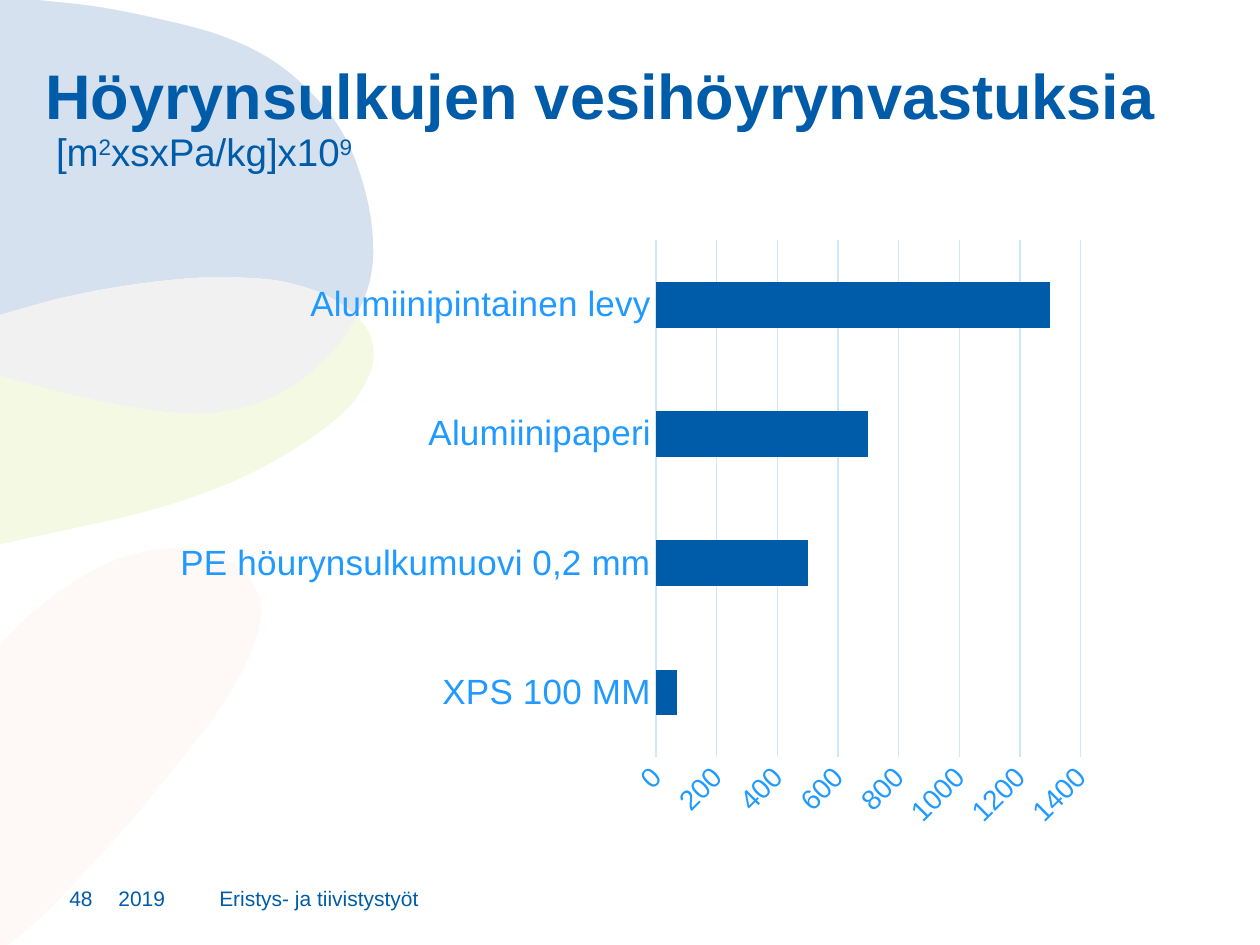
from copy import deepcopy
from typing import NamedTuple

from pptx import Presentation
from pptx.chart.data import CategoryChartData
from pptx.dml.color import RGBColor
from pptx.enum.chart import XL_CHART_TYPE as ChartType, XL_TICK_MARK as Tick
from pptx.enum.text import MSO_ANCHOR as Anchor, MSO_AUTO_SIZE as AutoSize, PP_ALIGN as Align
from pptx.oxml.ns import qn
from pptx.util import Pt

FONT = "Arial"
COLORS = {"navy": "005CA8", "label": "219AFF", "grid": "CCE8FF",
          "pink": "FEF9F7", "green": "F3F9E3", "blue": "D6E1F0", "grey": "F1F1F1"}
Curve = list[tuple[float, float]]


class Blob(NamedTuple):
    color: str
    outline: Curve


class Footer(NamedTuple):
    text: str
    left: float
    width: float


class TitleRun(NamedTuple):
    text: str
    size: float = 22
    bold: bool = False
    superscript: bool = False


def rgb(name: str) -> RGBColor:
    return RGBColor.from_string(COLORS[name])


def style(font, size: float, color: str = "navy", bold: bool = False) -> None:
    font.name, font.size, font.bold = FONT, Pt(size), bold
    font.color.rgb = rgb(color)


def smooth(knots: Curve, steps: int = 6) -> Curve:
    """Catmull-Rom curve through the knots."""
    ends = [knots[0], *knots, knots[-1]]
    curve = [knots[0]]
    for a, b, c, d in zip(ends, ends[1:], ends[2:], ends[3:]):
        for i in range(1, steps + 1):
            t = i / steps
            curve.append(tuple(
                0.5 * (2 * q + (r - p) * t + (2 * p - 5 * q + 4 * r - u) * t ** 2
                       + (3 * q - p - 3 * r + u) * t ** 3)
                for p, q, r, u in zip(a, b, c, d)))
    return curve


def draw_blob(shapes, blob: Blob) -> None:
    points = [(Pt(x), Pt(y)) for x, y in blob.outline]
    builder = shapes.build_freeform(*points[0])
    builder.add_line_segments(points[1:], close=True)
    sp = builder.convert_to_shape()
    sp.shadow.inherit = False
    sp.fill.solid()
    sp.fill.fore_color.rgb = rgb(blob.color)
    sp.line.fill.background()


def clear_margins(tf) -> None:
    tf.margin_left = tf.margin_right = tf.margin_top = tf.margin_bottom = 0
    tf.word_wrap = True


def draw_footer(shapes, footer: Footer) -> None:
    tf = shapes.add_textbox(Pt(footer.left), Pt(509), Pt(footer.width), Pt(11.5)).text_frame
    clear_margins(tf)
    tf.vertical_anchor = Anchor.BOTTOM
    tf.text = footer.text
    style(tf.paragraphs[0].runs[0].font, 12)


def add_title_run(p, part: TitleRun):
    r = p.add_run()
    r.text = part.text
    style(r.font, part.size, bold=part.bold)
    if part.superscript:
        r.font._element.set("baseline", "30000")
    return r


# Curves that bound the background blobs; all meet at the tip
TIP = (203.6, 180.6)
BLUE_EDGE = smooth([
    (21.6, 0), (54, 3.6), (87.8, 10.1), (126, 20.2), (157, 35.3), (182.2, 57.6),
    (198.7, 81.4), (209.5, 112.3), (213.3, 140.4), (211, 162), TIP])
WAVE_TOP = smooth([
    (0, 180), (33.8, 170.6), (67.7, 163.9), (101.5, 159.6), (128.2, 158.4),
    (157, 160.1), (179.3, 165.8), (193.7, 172.8), TIP])
WAVE_BOTTOM = smooth([
    TIP, (194.4, 195.8), (180.7, 210.2), (164.2, 222.5), (145.4, 231.1), (125.3, 235.4),
    (108, 236.4), (83.5, 234), (52.6, 228.2), (23.8, 221.2), (0, 214.7)])
GREEN_EDGE = smooth([
    TIP, (211, 190.4), (213.6, 203), (210.2, 216), (199.4, 232.6), (176.4, 251.3),
    (145.4, 269.4), (111.6, 283.7), (74.9, 294.5), (42.5, 301.8), (0, 311)])
PINK_EDGE = smooth([
    (0, 368.6), (19.4, 349.2), (45.4, 330.5), (70.6, 318.2), (100, 313.2), (121.7, 316.8),
    (139, 326), (147.6, 339.8), (149, 352.8), (142.6, 375), (126, 404.6), (100, 438.5),
    (72, 472.3), (41.8, 505.4), (19.4, 527.8), (4.3, 540)])
BLOBS = [
    Blob("pink", PINK_EDGE + [(0, 540)]),
    Blob("green", GREEN_EDGE + WAVE_BOTTOM[::-1]),
    Blob("blue", [(0, 0)] + BLUE_EDGE + WAVE_TOP[::-1]),
    Blob("grey", WAVE_TOP + WAVE_BOTTOM),
]
FOOTERS = [Footer("2019", 67.7, 50.4), Footer("Eristys- ja tiivistystyöt", 125.3, 289.4),
           Footer("48", 39.6, 28)]
HEADING = TitleRun("Höyrynsulkujen vesihöyrynvastuksia", 36, True)
UNIT = [TitleRun(" [m"), TitleRun("2", superscript=True),
        TitleRun("xsxPa/kg]x10"), TitleRun("9", superscript=True)]
RESISTANCES = {"XPS 100 MM": 70, "PE höurynsulkumuovi 0,2 mm": 500,
               "Alumiinipaperi": 700, "Alumiinipintainen levy": 1300}

prs = Presentation()
prs.slide_width, prs.slide_height = Pt(720), Pt(540)
s = prs.slides.add_slide(prs.slide_layouts[5])

# Background and footer
for blob in BLOBS:
    draw_blob(s.shapes, blob)
for footer in FOOTERS:
    draw_footer(s.shapes, footer)

# Bar chart
data = CategoryChartData()
data.categories = list(RESISTANCES)
data.add_series("Series 1", list(RESISTANCES.values()))
chart = s.shapes.add_chart(ChartType.BAR_CLUSTERED, Pt(92.2), Pt(130.3),
                           Pt(542.2), Pt(349.2), data).chart
style(chart.font, 10)
chart.has_legend = chart.has_title = False
plot = chart.plots[0]
plot.gap_width = 182
plot.vary_by_categories = False
bars = plot.series[0].format.fill
bars.solid()
bars.fore_color.rgb = rgb("navy")

cat_axis, val_axis = chart.category_axis, chart.value_axis
for axis, size in ((cat_axis, 20), (val_axis, 16)):
    axis.major_tick_mark = axis.minor_tick_mark = Tick.NONE
    style(axis.tick_labels.font, size, "label")
val_axis.minimum_scale, val_axis.maximum_scale, val_axis.major_unit = 0, 1400, 200
val_axis.has_major_gridlines = True
val_axis.format.line.fill.background()
for line in (cat_axis.format.line, val_axis.major_gridlines.format.line):
    line.color.rgb = rgb("grid")
    line.width = Pt(0.75)
val_axis._element.find(qn("c:txPr")).find(qn("a:bodyPr")).set("rot", str(-45 * 60000))

# Title, brought in front of the background
title = s.shapes.title
title.element.getparent().append(title.element)
title.left, title.top, title.width, title.height = Pt(25.9), Pt(37.4), Pt(658), Pt(89.3)
tf = title.text_frame
clear_margins(tf)
tf.auto_size = AutoSize.NONE
tf.vertical_anchor = Anchor.TOP
p = tf.paragraphs[0]
p.alignment = Align.LEFT
p.line_spacing = 0.9
r = add_title_run(p, HEADING)
p.add_line_break()
p._p.find(qn("a:br")).append(deepcopy(r.font._element))
for part in UNIT:
    add_title_run(p, part)

prs.save("out.pptx")
